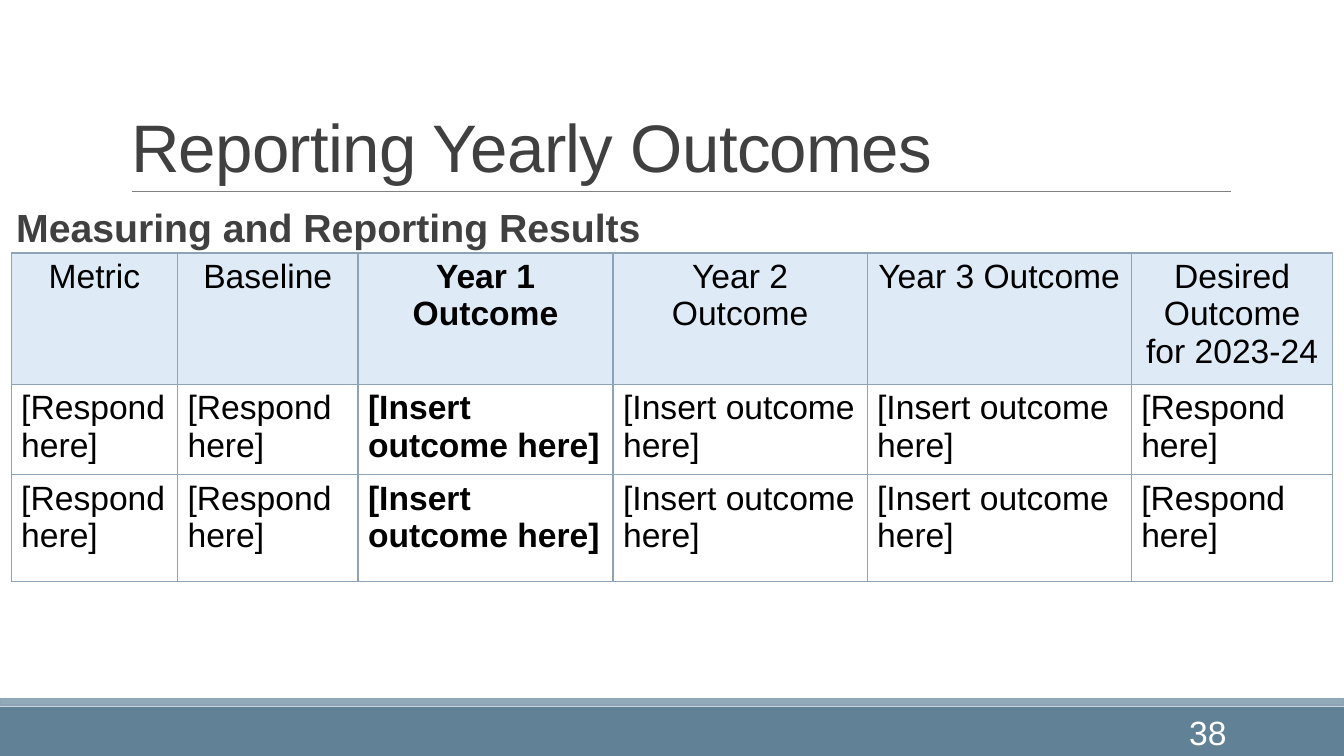
from collections import namedtuple
from dataclasses import dataclass

from lxml.etree import SubElement
from pptx import Presentation
from pptx.dml.color import RGBColor as Rgb
from pptx.enum.shapes import MSO_CONNECTOR as Connector, MSO_SHAPE as Shape
from pptx.enum.text import MSO_ANCHOR as Anchor, MSO_AUTO_SIZE as AutoSize, PP_ALIGN as Align
from pptx.oxml import parse_xml
from pptx.oxml.ns import nsdecls, qn
from pptx.util import Inches, Pt

Box = namedtuple("Box", "left top width height")


@dataclass(frozen=True)
class Theme:
    """Colours, font and type sizes of the slide."""
    font: str = "Arial"
    heading: str = "404040"
    body: str = "000000"
    white: str = "FFFFFF"
    band: str = "618197"
    band_edge: str = "92A9B9"
    border: str = "8FA3B6"
    header_fill: str = "DEEBF6"
    rule: str = "808080"
    title_size: int = 48
    subtitle_size: int = 28
    text_size: int = 24


THEME = Theme()
WIDTH, HEIGHT = Inches(13.33), Inches(7.5)

HEADERS = ["Metric", "Baseline", "Year 1 Outcome", "Year 2 Outcome",
           "Year 3 Outcome", "Desired Outcome for 2023-24"]
RESPOND, INSERT = "[Respond here]", "[Insert outcome here]"
RESPONSES = [RESPOND] * 2 + [INSERT] * 3 + [RESPOND]
ROWS = [HEADERS, RESPONSES, RESPONSES]
COLUMN_WEIGHTS = [1.65, 1.79, 2.53, 2.52, 2.62, 2]
ROW_WEIGHTS = [1.22, 0.84, 1.06]
BOLD_COLUMN = HEADERS.index("Year 1 Outcome")


def share(left, top, width, height):
    """Turn percentages of the slide into a box."""
    return Box(*(round(part * whole / 100) for part, whole in
                 zip((left, top, width, height), (WIDTH, HEIGHT) * 2)))


def inside(box, left, top, width, height):
    """Place a box by shares of another box."""
    return Box(round(box.left + left * box.width), round(box.top + top * box.height),
               round(width * box.width), round(height * box.height))


def apply(target, formats):
    """Set every attribute named in a dict of format values."""
    for name, value in formats.items():
        setattr(target, name, value)


def write(frame, words, size, color, bold=False, frame_format=None, paragraph_format=None):
    """Write one formatted paragraph into a text frame and return its run."""
    apply(frame, {"word_wrap": True, **(frame_format or {})})
    paragraph = frame.paragraphs[0]
    apply(paragraph, paragraph_format or {})
    run = paragraph.add_run()
    run.text = words
    apply(run.font, {"name": THEME.font, "size": Pt(size), "bold": bold})
    run.font.color.rgb = Rgb.from_string(color)
    return run


def add_heading(slide, box):
    """Format the title placeholder and draw the rule along its lower edge."""
    title = slide.shapes.title
    apply(title, box._asdict())
    run = write(title.text_frame, "Reporting Yearly Outcomes", THEME.title_size, THEME.heading,
                frame_format={"vertical_anchor": Anchor.BOTTOM, "auto_size": AutoSize.NONE},
                paragraph_format={"alignment": Align.LEFT, "line_spacing": 0.85})
    run.font._element.set("spc", "-50")
    start, bottom = box.left + Inches(0.11), box.top + box.height
    rule = slide.shapes.add_connector(Connector.STRAIGHT, start, bottom,
                                      start + Inches(10.9), bottom)
    rule.line.color.rgb = Rgb.from_string(THEME.rule)
    rule.line.width = Pt(0.5)
    SubElement(rule._element.spPr, qn("a:effectLst"))


def add_subtitle(slide, box):
    """Add the bold line above the table."""
    subtitle = slide.shapes.add_textbox(*box)
    margins = {f"margin_{side}": Inches(0.05) for side in ("left", "top", "right", "bottom")}
    write(subtitle.text_frame, "Measuring and Reporting Results", THEME.subtitle_size,
          THEME.heading, True, margins, {"line_spacing": 0.9, "space_after": Pt(2)})


def add_borders(cell):
    """Give a cell a thin line on all four sides."""
    properties = cell._tc.get_or_add_tcPr()
    for index, side in enumerate("LRTB"):
        properties.insert(index, parse_xml(
            f'<a:ln{side} {nsdecls("a")} w="{Pt(1)}"><a:solidFill>'
            f'<a:srgbClr val="{THEME.border}"/></a:solidFill></a:ln{side}>'))


def add_outcomes(slide, box):
    """Add the outcomes table, sharing the box out by column and row weights."""
    outcomes = slide.shapes.add_table(len(ROWS), len(HEADERS), *box).table
    apply(outcomes, {"first_row": False, "horz_banding": False})
    for column, weight in zip(outcomes.columns, COLUMN_WEIGHTS):
        column.width = round(box.width * weight / sum(COLUMN_WEIGHTS))
    for row, weight in zip(outcomes.rows, ROW_WEIGHTS):
        row.height = round(box.height * weight / sum(ROW_WEIGHTS))
    for row_index, entries in enumerate(ROWS):
        for column_index, entry in enumerate(entries):
            cell = outcomes.cell(row_index, column_index)
            is_header = row_index == 0
            write(cell.text_frame, entry, THEME.text_size, THEME.body,
                  column_index == BOLD_COLUMN,
                  paragraph_format={"alignment": Align.CENTER if is_header else Align.LEFT})
            if is_header:
                cell.fill.solid()
                cell.fill.fore_color.rgb = Rgb.from_string(THEME.header_fill)
            else:
                cell.fill.background()
            add_borders(cell)


def add_band(slide, box, color, edge=None):
    """Draw one flat band, outlined when an edge colour is given."""
    band = slide.shapes.add_shape(Shape.RECTANGLE, *box)
    band.shadow.inherit = False
    band.fill.solid()
    band.fill.fore_color.rgb = Rgb.from_string(color)
    if edge:
        band.line.color.rgb = Rgb.from_string(edge)
        band.line.width = Pt(1.25)
    else:
        band.line.fill.background()


def add_footer(slide, box):
    """Draw the two footer bands and the page number."""
    add_band(slide, inside(box, 0, 0.14, 1, 0.86), THEME.band)
    add_band(slide, inside(box, 0, 0, 1, 0.12), THEME.band_edge, THEME.border)
    number = slide.shapes.add_textbox(*inside(box, 0.81, 0.23, 0.11, 0.7))
    write(number.text_frame, "38", THEME.text_size, THEME.white,
          frame_format={"vertical_anchor": Anchor.MIDDLE},
          paragraph_format={"alignment": Align.RIGHT})


def main():
    """Build and save the slide."""
    deck = Presentation()
    apply(deck, {"slide_width": WIDTH, "slide_height": HEIGHT})
    slide = deck.slides.add_slide(deck.slide_layouts[5])
    add_footer(slide, share(0, 92.4, 100, 7.6))
    add_heading(slide, share(9, 4.13, 82.5, 21.2))
    add_subtitle(slide, share(0.83, 26.93, 82.5, 15.6))
    add_outcomes(slide, share(0.83, 33.47, 98.35, 41.6))
    deck.save("out.pptx")


if __name__ == "__main__":
    main()
